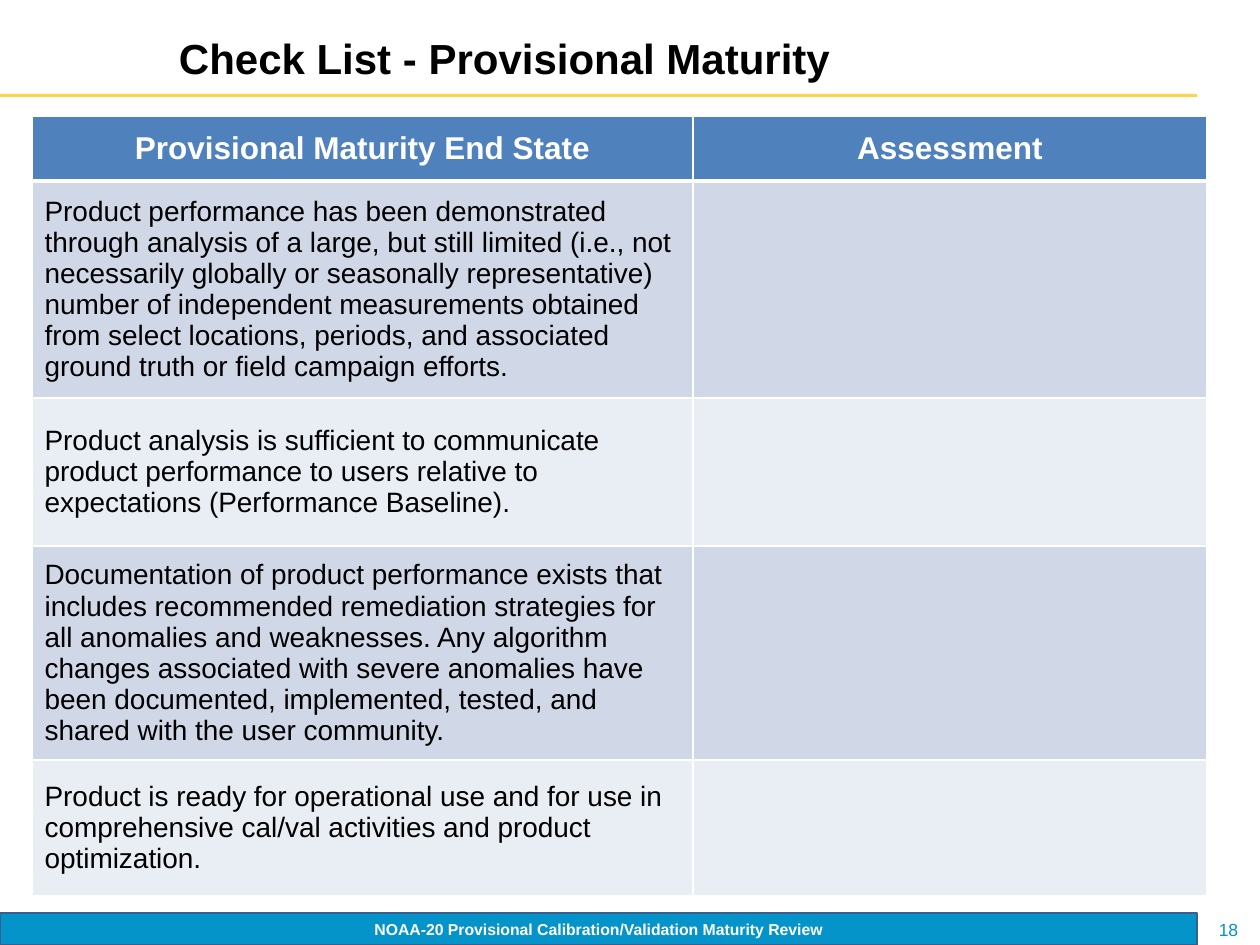
from dataclasses import dataclass

from lxml import etree
from pptx import Presentation
from pptx import util as u
from pptx.dml.color import RGBColor
from pptx.enum import shapes, text
from pptx.oxml.ns import qn

EMU_PER_PX = 914400 / 126
LEFT, CENTER = text.PP_ALIGN.LEFT, text.PP_ALIGN.CENTER
TOP, MIDDLE = text.MSO_ANCHOR.TOP, text.MSO_ANCHOR.MIDDLE


@dataclass(frozen=True)
class Theme:
    font: str = "Arial"
    ink: str = "000000"
    paper: str = "FFFFFF"
    footer: str = "0594C9"
    footer_edge: str = "3A5F8C"
    rule: str = "FFD24E"
    header: str = "4F81BD"
    bands: tuple = ("D0D8E8", "E9EDF4")
    title_size: int = 24
    header_size: int = 18
    body_size: int = 16
    number_size: int = 10
    footer_size: int = 9


THEME = Theme()

COLUMN_HEADS = ("Provisional Maturity End State", "Assessment")
END_STATES = (
    "Product performance has been demonstrated through analysis of a large, but still "
    "limited (i.e., not necessarily globally or seasonally representative) number of "
    "independent measurements obtained from select locations, periods, and associated "
    "ground truth or field campaign efforts.",
    "Product analysis is sufficient to communicate product performance to users relative "
    "to expectations (Performance Baseline).",
    "Documentation of product performance exists that includes recommended remediation "
    "strategies for all anomalies and weaknesses. Any algorithm changes associated with "
    "severe anomalies have been documented, implemented, tested, and shared with the "
    "user community.",
    "Product is ready for operational use and for use in comprehensive cal/val activities "
    "and product optimization.",
)


def px(length):
    return u.Emu(round(length * EMU_PER_PX))


def write(frame, words, size, color=THEME.ink, bold=False, align=LEFT):
    paragraph = frame.paragraphs[0]
    paragraph.alignment = align
    run = paragraph.add_run()
    run.text = words
    run.font.name = THEME.font
    run.font.size = u.Pt(size)
    run.font.bold = bold
    run.font.color.rgb = RGBColor.from_string(color)


def add_label(slide, box, words, anchor=MIDDLE, wrap=False, **style):
    frame = slide.shapes.add_textbox(*map(px, box)).text_frame
    frame.margin_left = frame.margin_top = frame.margin_right = frame.margin_bottom = 0
    frame.word_wrap = wrap
    frame.vertical_anchor = anchor
    write(frame, words, **style)


def add_bar(slide, box, fill, edge=None):
    bar = slide.shapes.add_shape(shapes.MSO_SHAPE.RECTANGLE, *map(px, box))
    bar.shadow.inherit = False
    bar.fill.solid()
    bar.fill.fore_color.rgb = RGBColor.from_string(fill)
    if edge:
        bar.line.color.rgb = RGBColor.from_string(edge)
        bar.line.width = 0
    else:
        bar.line.fill.background()


def add_footer(slide, box, words, number):
    left, top, width, height = box
    number_width = 63
    bar = (left, top, width - number_width, height)
    add_bar(slide, bar, THEME.footer, THEME.footer_edge)
    add_label(slide, bar, words, size=THEME.footer_size, color=THEME.paper,
              bold=True, align=CENTER)
    add_label(slide, (left + width - number_width, top, number_width, height), number,
              size=THEME.number_size, color=THEME.footer, align=CENTER)


def add_heading(slide, box, words):
    left, top, width, height = box
    add_bar(slide, (left, top + height, width, 3), THEME.rule)
    add_label(slide, (left + 179, top + 32, 804, 68), words, anchor=TOP, wrap=True,
              size=THEME.title_size, bold=True)


def style_cell(cell, fill, bottom_width=1):
    cell.vertical_anchor = MIDDLE
    properties = cell._tc.get_or_add_tcPr()
    for side, width in (("L", 1), ("R", 1), ("T", 1), ("B", bottom_width)):
        border = etree.SubElement(properties, qn(f"a:ln{side}"), w=str(u.Pt(width)))
        paint = etree.SubElement(border, qn("a:solidFill"))
        etree.SubElement(paint, qn("a:srgbClr"), val=THEME.paper)
    cell.fill.solid()
    cell.fill.fore_color.rgb = RGBColor.from_string(fill)


def add_checklist(slide, box, column_widths, row_heights):
    table = slide.shapes.add_table(len(row_heights), len(column_widths),
                                   *map(px, box)).table
    for column, width in zip(table.columns, column_widths):
        column.width = px(width)
    for row, height in zip(table.rows, row_heights):
        row.height = px(height)

    for cell, head in zip(table.rows[0].cells, COLUMN_HEADS):
        style_cell(cell, THEME.header, bottom_width=3)
        write(cell.text_frame, head, size=THEME.header_size, color=THEME.paper,
              bold=True, align=CENTER)

    for index, end_state in enumerate(END_STATES):
        cells = table.rows[index + 1].cells
        for cell in cells:
            style_cell(cell, THEME.bands[index % 2])
        write(cells[0].text_frame, end_state, size=THEME.body_size)


def main():
    deck = Presentation()
    deck.slide_width, deck.slide_height = px(1260), px(945)
    slide = deck.slides.add_slide(deck.slide_layouts[6])
    add_footer(slide, (0, 913, 1260, 32),
               "NOAA-20 Provisional Calibration/Validation Maturity Review", "18")
    add_heading(slide, (0, 0, 1197, 94), "Check List - Provisional Maturity")
    add_checklist(slide, (32, 116, 1175, 765), (661, 514), (65, 217, 148, 199, 136))
    deck.save("out.pptx")


if __name__ == "__main__":
    main()
